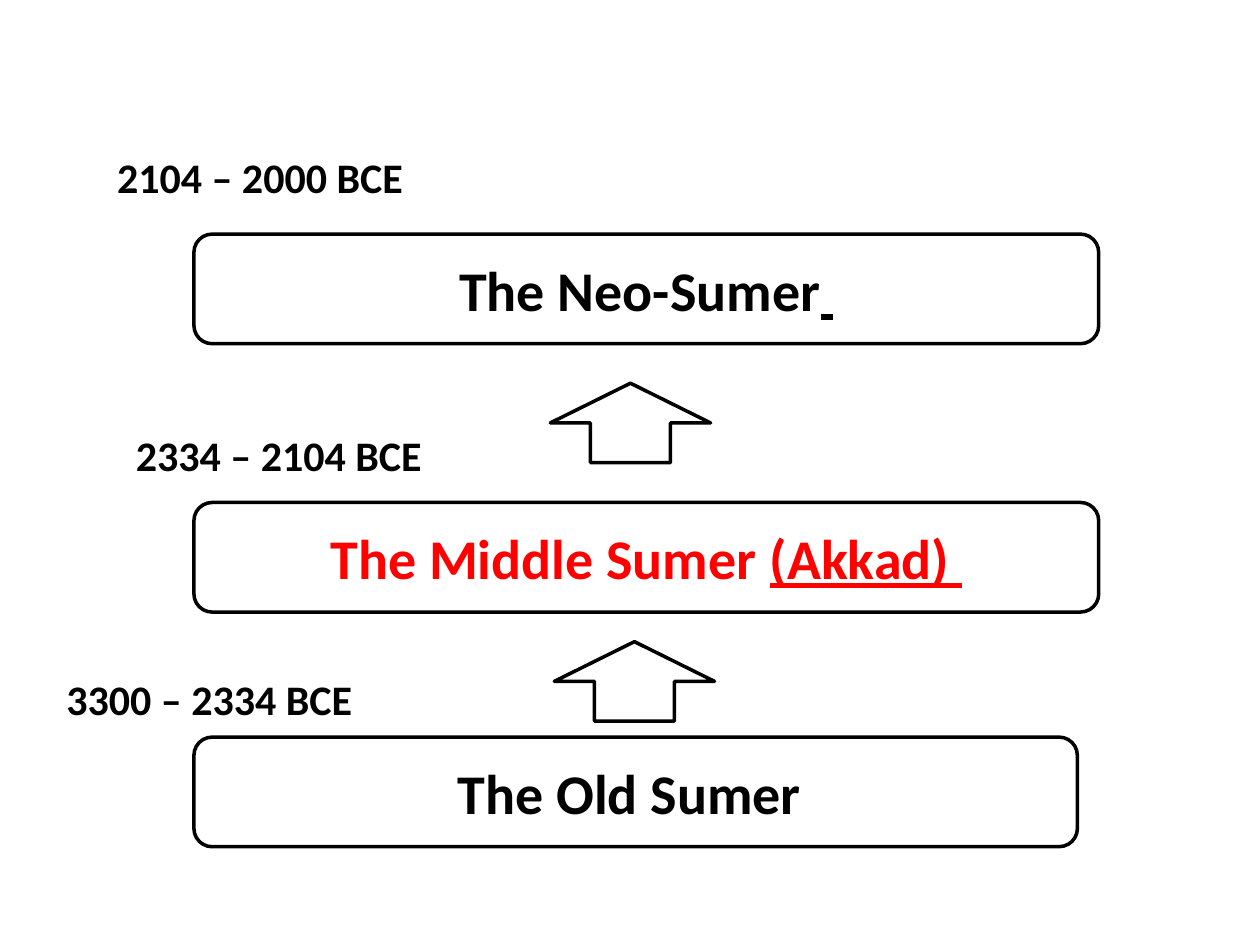
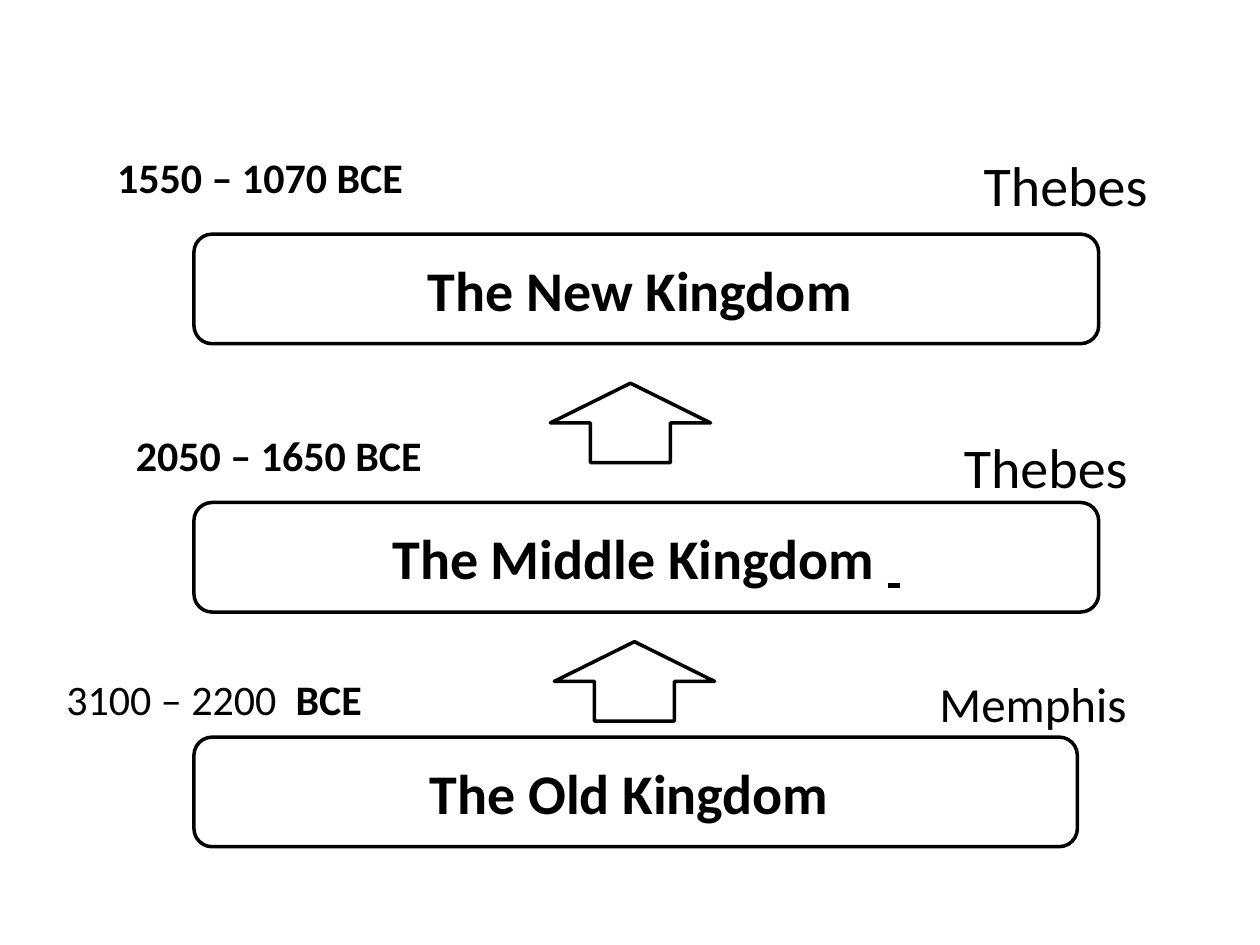
from dataclasses import dataclass
from typing import NamedTuple

from pptx import Presentation
from pptx.dml.color import RGBColor
from pptx.enum.shapes import MSO_SHAPE
from pptx.enum.text import MSO_ANCHOR, MSO_AUTO_SIZE, PP_ALIGN
from pptx.util import Cm, Pt

ROUNDED_RECTANGLE = MSO_SHAPE.ROUNDED_RECTANGLE
RIGHT_ARROW = MSO_SHAPE.RIGHT_ARROW
MIDDLE = MSO_ANCHOR.MIDDLE
CENTER = PP_ALIGN.CENTER
LEFT = PP_ALIGN.LEFT
FIT_SHAPE = MSO_AUTO_SIZE.SHAPE_TO_FIT_TEXT

COLORS = {"paper": "FFFFFF", "ink": "000000", "accent": "FF0000"}
FONT = "Calibri"
LINE_WIDTH = Pt(2)
BOX_LEFT, BOX_HEIGHT = 3.91, 2.21
ARROW_LENGTH, ARROW_SPAN = 1.6, 3.23
DATE_HEIGHT = 1.27


class Run(NamedTuple):
    text: str
    bold: bool = True
    underline: bool = False


class Level(NamedTuple):
    box_top: float
    box_width: float
    date_left: float
    date_top: float


class Arrow(NamedTuple):
    left: float
    top: float


class City(NamedTuple):
    name: str
    left: float
    top: float
    width: float
    height: float
    size: int = 32


@dataclass
class Period:
    name: list[Run]
    date: list[Run]
    city: City | None = None
    color: str = "ink"
    date_width: float = 6.32


LEVELS = [
    Level(14.86, 17.81, 1.09, 13.46),
    Level(10.13, 18.24, 2.49, 8.53),
    Level(4.72, 18.24, 2.11, 2.92),
]
ARROWS = [Arrow(11.99, 12.12), Arrow(11.91, 6.91)]

SUMER = [
    Period([Run("The Old Sumer ")], [Run("3300 – 2334 BCE")]),
    Period(
        [Run("The Middle Sumer "), Run("(Akkad) ", underline=True)],
        [Run("2334 – 2104 BCE")],
        color="accent",
    ),
    Period(
        [Run("The Neo-Sumer"), Run(" ", underline=True)],
        [Run("2104 – 2000 BCE")],
    ),
]
EGYPT = [
    Period(
        [Run("The Old Kingdom ")],
        [Run("3100 – 2200 ", bold=False), Run(" BCE")],
        City("Memphis", 18.69, 13.46, 4.32, 1.45, 28),
        date_width=6.53,
    ),
    Period(
        [Run("The Middle Kingdom "), Run(" ", underline=True)],
        [Run("2050 – 1650 BCE")],
        City("Thebes", 19.18, 8.59, 3.84, 1.63),
    ),
    Period(
        [Run("The New Kingdom ")],
        [Run("1550 – 1070 BCE")],
        City("Thebes", 19.58, 2.9, 3.84, 1.63),
    ),
]


def rgb(name: str) -> RGBColor:
    return RGBColor.from_string(COLORS[name])


def write_text(text_frame, runs: list[Run], *, size: int, color: str = "ink", align=LEFT) -> None:
    paragraph = text_frame.paragraphs[0]
    paragraph.alignment = align
    for part in runs:
        run = paragraph.add_run()
        run.text = part.text
        font = run.font
        font.name = FONT
        font.size = Pt(size)
        font.bold = part.bold
        font.underline = part.underline
        font.color.rgb = rgb(color)


def add_outlined_shape(slide, kind, left: float, top: float, width: float, height: float):
    shape = slide.shapes.add_shape(kind, Cm(left), Cm(top), Cm(width), Cm(height))
    shape.shadow.inherit = False
    shape.fill.solid()
    shape.fill.fore_color.rgb = rgb("paper")
    shape.line.color.rgb = rgb("ink")
    shape.line.width = LINE_WIDTH
    return shape


def add_label(
    slide, runs: list[Run], left: float, top: float, width: float, height: float, size: int
) -> None:
    label = slide.shapes.add_textbox(Cm(left), Cm(top), Cm(width), Cm(height))
    label.text_frame.word_wrap = False
    label.text_frame.auto_size = FIT_SHAPE
    write_text(label.text_frame, runs, size=size)


def add_period(slide, period: Period, level: Level) -> None:
    box = add_outlined_shape(
        slide, ROUNDED_RECTANGLE, BOX_LEFT, level.box_top, level.box_width, BOX_HEIGHT
    )
    box.text_frame.vertical_anchor = MIDDLE
    write_text(box.text_frame, period.name, size=32, color=period.color, align=CENTER)
    add_label(
        slide, period.date, level.date_left, level.date_top, period.date_width, DATE_HEIGHT, 24
    )
    if period.city:
        city = period.city
        add_label(
            slide, [Run(city.name, bold=False)],
            city.left, city.top, city.width, city.height, city.size,
        )


def add_timeline(presentation, periods: list[Period]) -> None:
    slide = presentation.slides.add_slide(presentation.slide_layouts[6])
    slide.background.fill.solid()
    slide.background.fill.fore_color.rgb = rgb("paper")
    for arrow in ARROWS:
        shape = add_outlined_shape(
            slide, RIGHT_ARROW, arrow.left, arrow.top, ARROW_LENGTH, ARROW_SPAN
        )
        shape.rotation = 270
    for period, level in zip(periods, LEVELS):
        add_period(slide, period, level)


def main() -> None:
    presentation = Presentation()
    presentation.slide_width = Cm(25.4)
    presentation.slide_height = Cm(19.05)
    for periods in (SUMER, EGYPT):
        add_timeline(presentation, periods)
    presentation.save("out.pptx")


if __name__ == "__main__":
    main()
